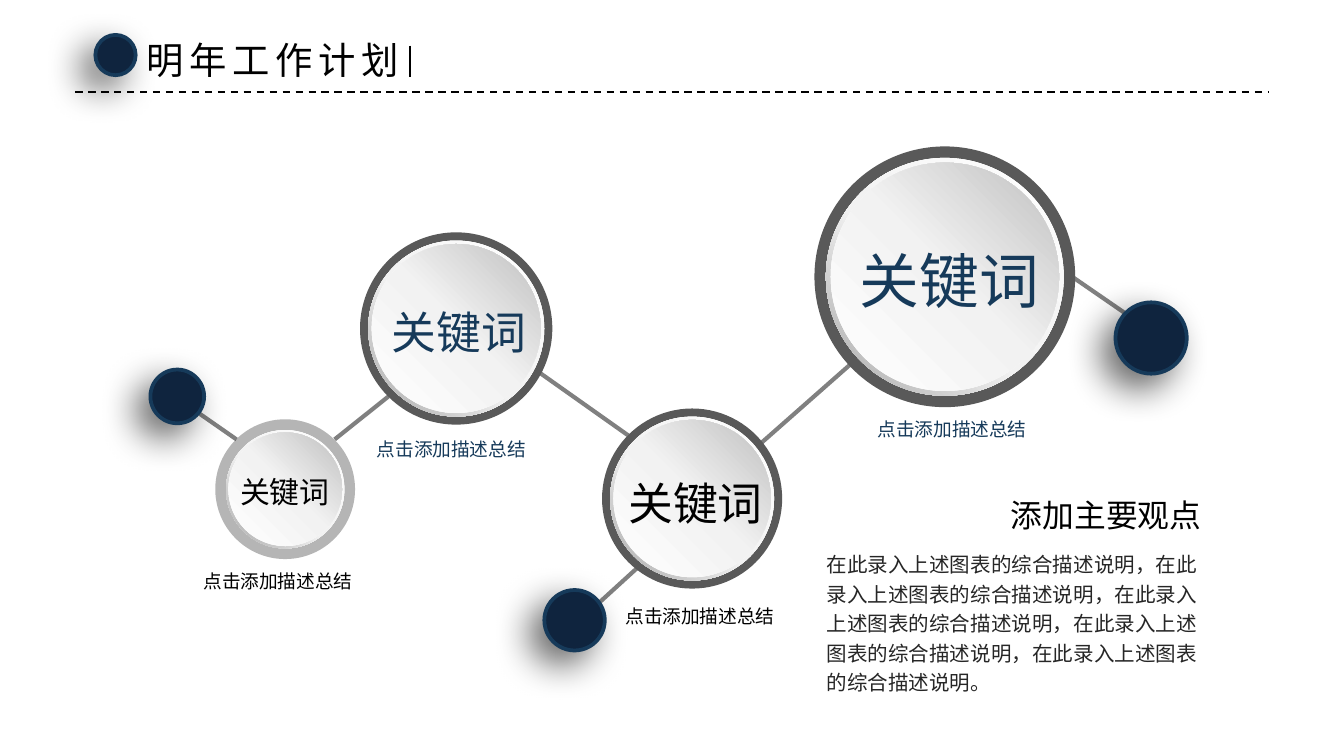
import dataclasses

import lxml.etree
import pptx
import pptx.dml.color
import pptx.enum.dml
import pptx.enum.shapes
import pptx.enum.text
import pptx.oxml
import pptx.oxml.ns
import pptx.util

Pt = pptx.util.Pt
qn = pptx.oxml.ns.qn
OVAL = pptx.enum.shapes.MSO_SHAPE.OVAL
DONUT = pptx.enum.shapes.MSO_SHAPE.DONUT
ALIGN = pptx.enum.text.PP_ALIGN
DASH = pptx.enum.dml.MSO_LINE.DASH
NAMESPACE = 'xmlns:a="http://schemas.openxmlformats.org/drawingml/2006/main"'
FONT = "Noto Sans CJK SC"
BLACK, NAVY, BLUE, GREY, DARK_GREY = "000000", "0F243E", "163A5A", "808080", "595959"
RIM_STOPS = ((0, "FFFFFF"), (55, "F2F2F2"), (100, "A6A6A6"))
FACE_STOPS = ((0, "FFFFFF"), (51, "F2F2F2"), (100, "BFBFBF"))


@dataclasses.dataclass
class Keyword:
    x: float
    y: float
    diameter: float
    rim: float
    size: float
    label_x: float
    label_y: float
    caption_x: float
    caption_top: float
    color: str
    fill: str = DARK_GREY
    alpha: int = 100


@dataclasses.dataclass
class Dot:
    x: float
    y: float
    diameter: float


@dataclasses.dataclass
class Link:
    x1: float
    y1: float
    x2: float
    y2: float
    color: str = GREY
    width: float = 2.25
    dashed: bool = False


KEYWORDS = [
    Keyword(244.4, 176, 103, 94.3, 24, 245.9, 177.8, 241.8, 229.7, BLUE),
    Keyword(152.8, 262.1, 74.9, 63.4, 16, 152.6, 263.2, 148.9, 300.2, BLACK, "0D0D0D", 30),
    Keyword(370.8, 267.1, 96.5, 87.8, 24, 372.6, 269.3, 375, 319, BLACK),
    Keyword(506.2, 148.3, 139.7, 127.4, 32, 508.7, 149.8, 510.1, 218.9, BLUE),
]
DOTS = [Dot(95, 212.4, 28.8), Dot(307.8, 332.3, 32.4), Dot(616.7, 181.1, 38.2)]
LINKS = [
    Link(179.3, 235.4, 208.1, 212.4),
    Link(288.7, 199.4, 342.7, 237.6),
    Link(407.5, 237.6, 456.5, 194.4),
    Link(103, 218.9, 126.7, 235.4),
    Link(319, 324.7, 342.7, 303.1),
    Link(572.4, 146.9, 604.8, 169.2),
]
TITLE_DOT = Dot(61.9, 29.5, 21.6)
TITLE_RULE = Link(40.3, 49.2, 679.7, 49.2, BLACK, 1, True)
TITLE_CURSOR = Link(219.6, 24.5, 219.6, 41, BLACK, 1.5)


def rgb(value: str) -> pptx.dml.color.RGBColor:
    return pptx.dml.color.RGBColor.from_string(value)


def add_circle(slide, kind, x: float, y: float, diameter: float):
    radius = diameter / 2
    circle = slide.shapes.add_shape(kind, Pt(x - radius), Pt(y - radius), Pt(diameter), Pt(diameter))
    circle.shadow.inherit = False
    circle.line.fill.background()
    return circle


def fill_gradient(circle, stops: tuple, angle: int) -> None:
    marks = "".join(
        f'<a:gs pos="{position * 1000}"><a:srgbClr val="{color}"/></a:gs>' for position, color in stops
    )
    gradient = pptx.oxml.parse_xml(
        f'<a:gradFill {NAMESPACE} rotWithShape="1"><a:gsLst>{marks}</a:gsLst>'
        f'<a:lin ang="{angle * 60000}" scaled="0"/></a:gradFill>'
    )
    circle._element.spPr.find(qn("a:prstGeom")).addnext(gradient)


def add_text(slide, text: str, left: float, top: float, width: float, height: float, size: float,
             color: str, align=ALIGN.LEFT, wrap: bool = True, spacing=None, insets=(7.2, 3.6),
             tracking: int = 0) -> None:
    frame = slide.shapes.add_textbox(Pt(left), Pt(top), Pt(width), Pt(height)).text_frame
    frame.word_wrap = wrap
    frame.margin_left = frame.margin_right = Pt(insets[0])
    frame.margin_top = frame.margin_bottom = Pt(insets[1])
    paragraph = frame.paragraphs[0]
    paragraph.text = text
    paragraph.alignment = align
    paragraph.line_spacing = spacing
    font = paragraph.font
    font.name, font.size = FONT, Pt(size)
    font.color.rgb = rgb(color)
    properties = paragraph._p.pPr.find(qn("a:defRPr"))
    lxml.etree.SubElement(properties, qn("a:ea"), typeface=FONT)
    if tracking:
        properties.set("spc", str(tracking * 100))


def add_link(slide, link: Link) -> None:
    connector = slide.shapes.add_connector(
        pptx.enum.shapes.MSO_CONNECTOR.STRAIGHT, Pt(link.x1), Pt(link.y1), Pt(link.x2), Pt(link.y2)
    )
    connector.line.color.rgb = rgb(link.color)
    connector.line.width = Pt(link.width)
    if link.dashed:
        connector.line.dash_style = DASH
    lxml.etree.SubElement(connector._element.spPr, qn("a:effectLst"))


def add_dot(slide, dot: Dot) -> None:
    circle = add_circle(slide, OVAL, dot.x, dot.y, dot.diameter)
    circle.fill.solid()
    circle.fill.fore_color.rgb = rgb(NAVY)
    circle.line.color.rgb = rgb(BLUE)
    circle.line.width = Pt(2)
    circle._element.spPr.find(qn("a:effectLst")).append(pptx.oxml.parse_xml(
        f'<a:outerShdw {NAMESPACE} blurRad="{Pt(20)}" dist="{Pt(10)}" dir="{135 * 60000}" algn="tr" '
        f'rotWithShape="0"><a:srgbClr val="{BLACK}"><a:alpha val="60000"/></a:srgbClr></a:outerShdw>'
    ))


def add_keyword(slide, keyword: Keyword) -> None:
    ring = add_circle(slide, OVAL, keyword.x, keyword.y, keyword.diameter)
    ring.fill.solid()
    ring.fill.fore_color.rgb = rgb(keyword.fill)
    if keyword.alpha < 100:
        color = ring._element.spPr.find(qn("a:solidFill"))[0]
        lxml.etree.SubElement(color, qn("a:alpha"), val=str(keyword.alpha * 1000))
    rim = add_circle(slide, DONUT, keyword.x, keyword.y, keyword.rim)
    rim.adjustments[0] = 0.05
    fill_gradient(rim, RIM_STOPS, 135)
    face = add_circle(slide, OVAL, keyword.x, keyword.y, keyword.rim * 0.96)
    fill_gradient(face, FACE_STOPS, 315)
    width, height = keyword.size * 3 + 14.4, keyword.size * 1.2 + 7.2
    add_text(slide, "关键词", keyword.label_x - width / 2, keyword.label_y - height / 2,
             width, height, keyword.size, keyword.color, ALIGN.CENTER, wrap=False)
    add_text(slide, "点击添加描述总结", keyword.caption_x - 53.6, keyword.caption_top, 107.2, 19.4,
             10, keyword.color, ALIGN.CENTER, spacing=Pt(14.1), insets=(6.5, 2.9))


def main() -> None:
    """Build the work plan slide with its chain of keywords."""
    deck = pptx.Presentation()
    deck.slide_width, deck.slide_height = Pt(720), Pt(405)
    slide = deck.slides.add_slide(deck.slide_layouts[6])
    for link in LINKS:
        add_link(slide, link)
    for keyword in KEYWORDS:
        add_keyword(slide, keyword)
    add_text(slide, "添加主要观点", 467.3, 262.1, 182.9, 27.4, 17, BLACK, ALIGN.RIGHT, insets=(6.5, 3.6))
    add_text(slide, "在此录入上述图表的综合描述说明，" * 4 + "在此录入上述图表的综合描述说明。",
             437.8, 290.2, 216, 85.7, 11, "262626", spacing=1.2, insets=(5, 2.9))
    for dot in DOTS:
        add_dot(slide, dot)
    add_link(slide, TITLE_RULE)
    add_dot(slide, TITLE_DOT)
    add_text(slide, "明年工作计划", 71.3, 16.6, 154.1, 31.7, 20, BLACK, wrap=False, tracking=3)
    add_link(slide, TITLE_CURSOR)
    deck.save("out.pptx")


if __name__ == "__main__":
    main()
